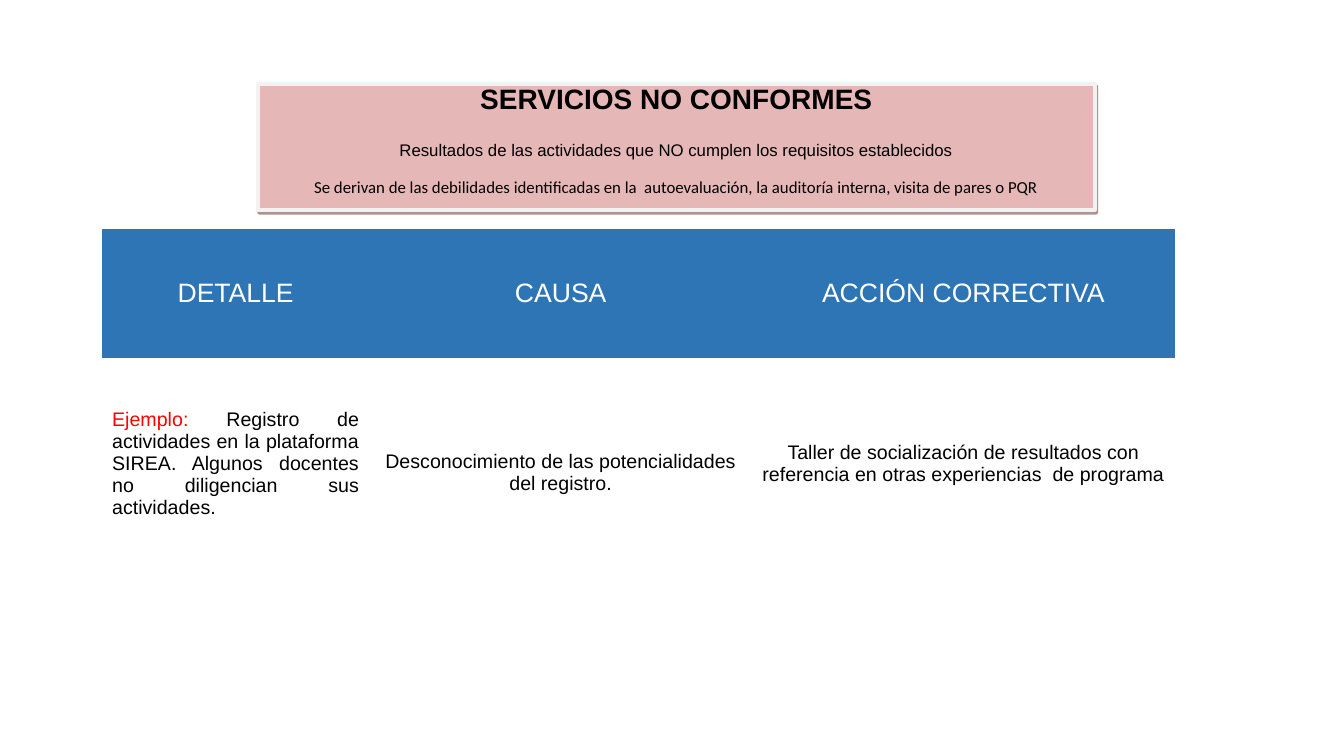
from lxml import etree
from pptx import Presentation
from pptx.dml.color import RGBColor
from pptx.enum.text import MSO_ANCHOR as ANCHOR, MSO_AUTO_SIZE as AUTO, PP_ALIGN as ALIGN
from pptx.oxml import parse_xml
from pptx.oxml.ns import qn
from pptx.util import Pt


def rgb(value):
    return RGBColor.from_string(value)


def add_text(p, text, size=14, color="000000", font="Arial", bold=False, align=ALIGN.CENTER):
    p.alignment = align
    r = p.add_run()
    r.text = text
    r.font.size = Pt(size)
    r.font.name = font
    r.font.bold = bold
    r.font.color.rgb = rgb(color)


prs = Presentation()
prs.slide_width, prs.slide_height = Pt(960), Pt(540)
s = prs.slides.add_slide(prs.slide_layouts[5])

# Title box
sp = s.shapes.title
sp.left, sp.top, sp.width, sp.height = Pt(184.3), Pt(59.8), Pt(597.6), Pt(90)
sp.fill.solid()
sp.fill.fore_color.rgb = rgb("E5B8B7")
sp.line.color.rgb = rgb("F2F2F2")
sp.line.width = Pt(3)
sp._element.spPr.append(parse_xml(
    '<a:effectLst xmlns:a="http://schemas.openxmlformats.org/drawingml/2006/main">'
    '<a:outerShdw dist="27940" dir="3780000" algn="ctr" rotWithShape="0">'
    '<a:srgbClr val="632423"><a:alpha val="49000"/></a:srgbClr>'
    '</a:outerShdw></a:effectLst>'))

tf = sp.text_frame
tf.word_wrap = True
tf.auto_size = AUTO.NONE
tf.vertical_anchor = ANCHOR.MIDDLE
tf.margin_top, tf.margin_bottom = Pt(0), Pt(14)
title_lines = [
    ("SERVICIOS NO CONFORMES", 20, "Arial", True, 0),
    ("Resultados de las actividades que NO cumplen los requisitos establecidos",
     12, "Arial", False, 15.5),
    ("Se derivan de las debilidades identificadas en la  autoevaluación, "
     "la auditoría interna, visita de pares o PQR", 12, "Calibri", False, 10),
]
for i, (text, size, font, bold, before) in enumerate(title_lines):
    p = tf.add_paragraph() if i else tf.paragraphs[0]
    p.line_spacing = 1.15
    p.space_before = Pt(before)
    add_text(p, text, size=size, font=font, bold=bold)

# Table without style or grid
col_widths = [190.8, 273.6, 301.7]
row_heights = [92.2, 151.2, 94.3]
table = s.shapes.add_table(3, 3, Pt(72.9), Pt(163.6),
                           Pt(sum(col_widths)), Pt(sum(row_heights))).table
table.horz_banding = False
table._tbl.tblPr.find(qn("a:tableStyleId")).text = "{2D5ABB26-0587-4C30-8999-92F81FD0307C}"
for col, width in zip(table.columns, col_widths):
    col.width = Pt(width)
for row, height in zip(table.rows, row_heights):
    row.height = Pt(height)
for cell in table.iter_cells():
    cell.fill.background()
    cell.vertical_anchor = ANCHOR.MIDDLE

# Header row
for c, text in enumerate(["DETALLE", "CAUSA", "ACCIÓN CORRECTIVA"]):
    cell = table.cell(0, c)
    cell.fill.solid()
    cell.fill.fore_color.rgb = rgb("2E75B5")
    add_text(cell.text_frame.paragraphs[0], text, size=19, color="FFFFFF")

# Example row
detail, cause, action = [table.cell(1, c) for c in range(3)]
p = detail.text_frame.paragraphs[0]
add_text(p, "Ejemplo: ", color="FF0000", align=ALIGN.JUSTIFY)
add_text(p, "Registro de actividades en la plataforma SIREA. "
            "Algunos docentes no diligencian sus actividades.", align=ALIGN.JUSTIFY)

cause.vertical_anchor = ANCHOR.TOP
cause.margin_top = Pt(66)
add_text(cause.text_frame.paragraphs[0],
         "Desconocimiento de las potencialidades del registro.")
add_text(action.text_frame.paragraphs[0],
         "Taller de socialización de resultados con referencia en otras "
         "experiencias  de programa")

prs.save("out.pptx")
